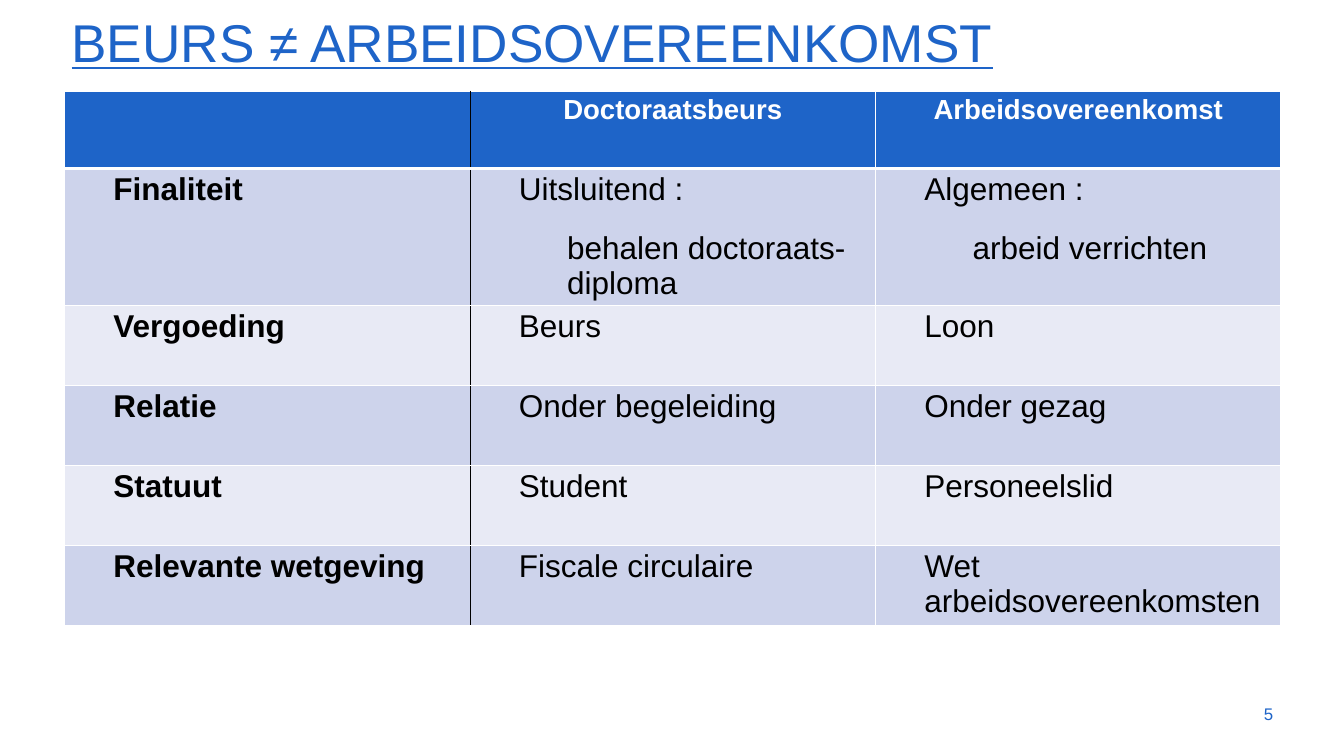
from lxml import etree
from pptx import Presentation
from pptx.dml.color import RGBColor
from pptx.enum import text as t
from pptx.oxml import ns
from pptx.util import Inches, Pt

FONT = "Arial"
BLUE, WHITE, BLACK = "1E64C8", "FFFFFF", "000000"
BANDS = ["CDD3EB", "E8EAF5"]
INDENTS = [0.59, 1.27]
COL_WIDTH = 5.72
ROW_HEIGHTS = [1.09, 1.93] + [1.13] * 4
HEADER = ["", "Doctoraatsbeurs", "Arbeidsovereenkomst"]
ROWS = [
    ["Finaliteit", "Uitsluitend :\nbehalen doctoraats-diploma", "Algemeen :\narbeid verrichten"],
    ["Vergoeding", "Beurs", "Loon"],
    ["Relatie", "Onder begeleiding", "Onder gezag"],
    ["Statuut", "Student", "Personeelslid"],
    ["Relevante wetgeving", "Fiscale circulaire", "Wet arbeidsovereenkomsten"],
]


def rgb(value):
    return RGBColor.from_string(value)


def add_run(p, content, size, color, bold=False, underline=False):
    r = p.add_run()
    r.text = content
    r.font.name = FONT
    r.font.size = Pt(size)
    r.font.color.rgb = rgb(color)
    r.font.bold = bold
    r.font.underline = underline


def place(sp, left, top, width, height):
    sp.left, sp.top = Inches(left), Inches(top)
    sp.width, sp.height = Inches(width), Inches(height)


def add_title(s, content):
    sp = s.shapes.title
    place(sp, 0.91, 0.15, 17.18, 0.94)
    tf = sp.text_frame
    tf.auto_size = t.MSO_AUTO_SIZE.NONE
    tf.word_wrap = True
    tf.vertical_anchor = t.MSO_ANCHOR.BOTTOM
    p = tf.paragraphs[0]
    p.alignment = t.PP_ALIGN.LEFT
    p.line_spacing = 0.9
    add_run(p, content, 54, BLUE, underline=True)


def set_borders(cell, row, col):
    tcPr = cell._tc.get_or_add_tcPr()
    borders = [
        ("a:lnL", BLACK if col == 1 else WHITE, 1),
        ("a:lnR", BLACK if col == 0 else WHITE, 1),
        ("a:lnT", WHITE, 3 if row == 1 else 1),
        ("a:lnB", WHITE, 3 if row == 0 else 1),
    ]
    for i, (tag, color, width) in enumerate(borders):
        ln = etree.Element(ns.qn(tag), w=str(Pt(width)))
        fill = etree.SubElement(ln, ns.qn("a:solidFill"))
        etree.SubElement(fill, ns.qn("a:srgbClr"), val=color)
        tcPr.insert(i, ln)


def fill_cell(cell, content, row, col):
    cell.fill.solid()
    cell.fill.fore_color.rgb = rgb(BANDS[(row - 1) % 2] if row else BLUE)
    set_borders(cell, row, col)
    if not content:
        return
    tf = cell.text_frame
    for i, line in enumerate(content.split("\n")):
        p = tf.add_paragraph() if i else tf.paragraphs[0]
        p.space_before = Pt(12 if i else 0)
        p.space_after = Pt(12)
        if row == 0:
            p.alignment = t.PP_ALIGN.CENTER
            add_run(p, line, 28, WHITE, bold=True)
        else:
            pPr = p._p.get_or_add_pPr()
            pPr.set("marL", str(Inches(INDENTS[i])))
            pPr.set("indent", "0")
            add_run(p, line, 32, BLACK, bold=col == 0)


def add_comparison(s):
    rows = [HEADER] + ROWS
    table = s.shapes.add_table(
        len(rows), len(HEADER), Inches(0.91), Inches(1.29),
        Inches(COL_WIDTH * len(HEADER)), Inches(sum(ROW_HEIGHTS)),
    ).table
    for column in table.columns:
        column.width = Inches(COL_WIDTH)
    for i, (height, values) in enumerate(zip(ROW_HEIGHTS, rows)):
        table.rows[i].height = Inches(height)
        for j, content in enumerate(values):
            fill_cell(table.cell(i, j), content, i, j)


def add_page_number(s, number):
    sp = s.shapes.add_textbox(Inches(17.05), Inches(9.79), Inches(1.01), Inches(0.57))
    tf = sp.text_frame
    tf.word_wrap = True
    tf.vertical_anchor = t.MSO_ANCHOR.MIDDLE
    p = tf.paragraphs[0]
    p.alignment = t.PP_ALIGN.RIGHT
    add_run(p, number, 17.1, BLUE)


def main():
    prs = Presentation()
    prs.slide_width, prs.slide_height = Inches(18.96), Inches(10.67)
    s = prs.slides.add_slide(prs.slide_layouts[5])
    add_title(s, "BEURS ≠ ARBEIDSOVEREENKOMST")
    add_comparison(s)
    add_page_number(s, "5")
    prs.save("out.pptx")


if __name__ == "__main__":
    main()
